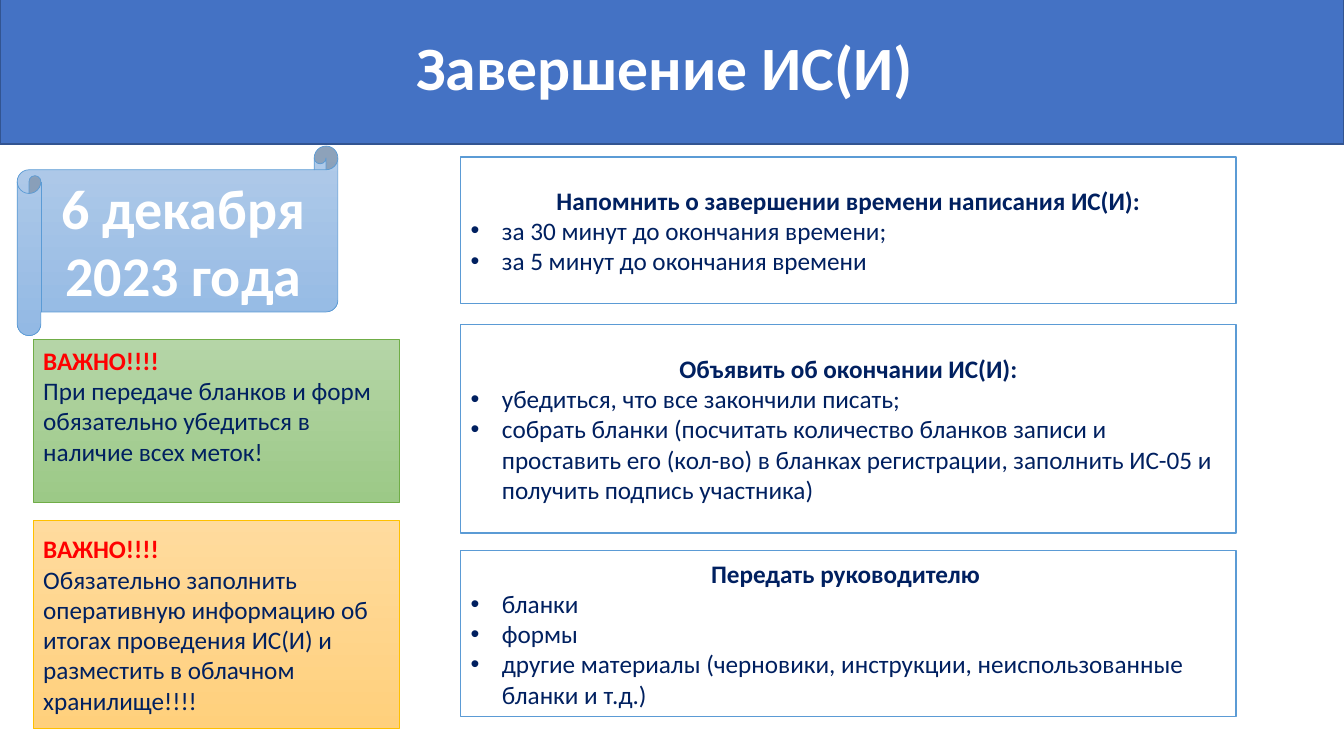
from lxml import etree
from pptx import Presentation
from pptx import util as u
from pptx.dml.color import RGBColor
from pptx.enum import shapes, text
from pptx.oxml.ns import qn

WIDTH, HEIGHT = u.Inches(13.33), u.Inches(7.5)
NAVY, RED, WHITE, BLUE = "002060", "FF0000", "FFFFFF", "5B9BD5"
SHAPE, ALIGN = shapes.MSO_SHAPE, text.PP_ALIGN
STEP_COLUMN, NOTE_COLUMN = (34.28, 57.69), (2.48, 27.23)

STEPS = [
    (20.8, 19.33, "Напомнить о завершении времени написания ИС(И):",
     ["за 30 минут до окончания времени;", "за 5 минут до окончания времени"]),
    (42.93, 27.6, "Объявить об окончании ИС(И):",
     ["убедиться, что все закончили писать;",
      "собрать бланки (посчитать количество бланков записи и проставить его (кол-во) "
      "в бланках регистрации, заполнить ИС-05 и получить подпись участника)"]),
    (72.8, 22, "Передать руководителю ",
     ["бланки", "формы",
      "другие материалы (черновики, инструкции, неиспользованные бланки и т.д.)"]),
]
NOTES = [
    (44.93, 21.47, ("B5D5A7", "9CC987"), "70AD47", 0.35,
     "При передаче бланков и форм обязательно убедиться в наличие всех меток!"),
    (68.8, 27.6, ("FFDB9E", "FFD07C"), "FFC000", 0.05,
     "Обязательно заполнить оперативную информацию об итогах проведения ИС(И) "
     "и разместить в облачном хранилище!!!!"),
]


def colour(value):
    """Turn a hex string into a colour."""
    return RGBColor.from_string(value)


def add_panel(slide, preset, box, fills, outline, weight):
    """Draw a filled panel in a box given in percent of the slide."""
    left, top, width, height = box
    panel = slide.shapes.add_shape(
        preset, int(WIDTH * left / 100), int(HEIGHT * top / 100),
        int(WIDTH * width / 100), int(HEIGHT * height / 100))
    panel.shadow.inherit = False
    if len(fills) == 1:
        panel.fill.solid()
        panel.fill.fore_color.rgb = colour(fills[0])
    else:
        panel.fill.gradient()
        panel.fill.gradient_angle = 270
        for stop, shade in zip(panel.fill.gradient_stops, fills):
            stop.color.rgb = colour(shade)
    panel.line.color.rgb = colour(outline)
    panel.line.width = u.Pt(weight)
    panel.text_frame.word_wrap = True
    panel.text_frame.vertical_anchor = text.MSO_ANCHOR.MIDDLE
    return panel


def style(paragraph, size, shade, bold, align):
    """Format a paragraph and its runs."""
    paragraph.alignment = align
    for run in paragraph.runs:
        run.font.name = "Calibri"
        run.font.size = u.Pt(size)
        run.font.bold = bold
        run.font.color.rgb = colour(shade)


def add_bullet(paragraph):
    """Give a paragraph a hanging round bullet."""
    properties = paragraph._p.get_or_add_pPr()
    properties.set("marL", str(u.Inches(0.31)))
    properties.set("indent", str(-u.Inches(0.31)))
    etree.SubElement(properties, qn("a:buFont")).set("typeface", "Arial")
    etree.SubElement(properties, qn("a:buChar")).set("char", "•")


def add_title(slide, box):
    """Place the title band."""
    band = add_panel(slide, SHAPE.RECTANGLE, box, ["4472C4"], "325491", 1)
    band.text_frame.text = "Завершение ИС(И) "
    heading = band.text_frame.paragraphs[0]
    heading.line_spacing = 0.9
    style(heading, 44, WHITE, True, ALIGN.CENTER)


def add_date(slide, box):
    """Place the scroll with the date."""
    scroll = add_panel(slide, SHAPE.HORIZONTAL_SCROLL, box, ["B1CBE9", "93B9E4"], BLUE, 0.5)
    scroll.text_frame.text = "6 декабря 2023 года"
    style(scroll.text_frame.paragraphs[0], 40, WHITE, True, ALIGN.CENTER)


def add_step(slide, box, heading, actions):
    """Place a step with its heading and bulleted actions."""
    frame = add_panel(slide, SHAPE.RECTANGLE, box, [WHITE], BLUE, 1).text_frame
    frame.text = "\n".join([heading, *actions])
    first, *rest = frame.paragraphs
    style(first, 18, NAVY, True, ALIGN.CENTER)
    for action in rest:
        style(action, 18, NAVY, False, ALIGN.LEFT)
        add_bullet(action)


def add_note(slide, box, fills, outline, bottom_inset, message):
    """Place a warning note with a red lead line."""
    frame = add_panel(slide, SHAPE.RECTANGLE, box, fills, outline, 0.5).text_frame
    frame.margin_bottom = u.Inches(bottom_inset)
    frame.text = "ВАЖНО!!!!\n" + message
    lead, body = frame.paragraphs
    style(lead, 18, RED, True, ALIGN.LEFT)
    style(body, 18, NAVY, False, ALIGN.LEFT)


def main():
    """Build and save the slide."""
    deck = Presentation()
    deck.slide_width, deck.slide_height = WIDTH, HEIGHT
    slide = deck.slides.add_slide(deck.slide_layouts[6])
    add_title(slide, (0, -0.27, 100, 19.33))
    add_date(slide, (1.28, 19.33, 23.86, 25.07))
    for top, height, heading, actions in STEPS:
        left, width = STEP_COLUMN
        add_step(slide, (left, top, width, height), heading, actions)
    for top, height, *content in NOTES:
        left, width = NOTE_COLUMN
        add_note(slide, (left, top, width, height), *content)
    deck.save("out.pptx")


if __name__ == "__main__":
    main()
